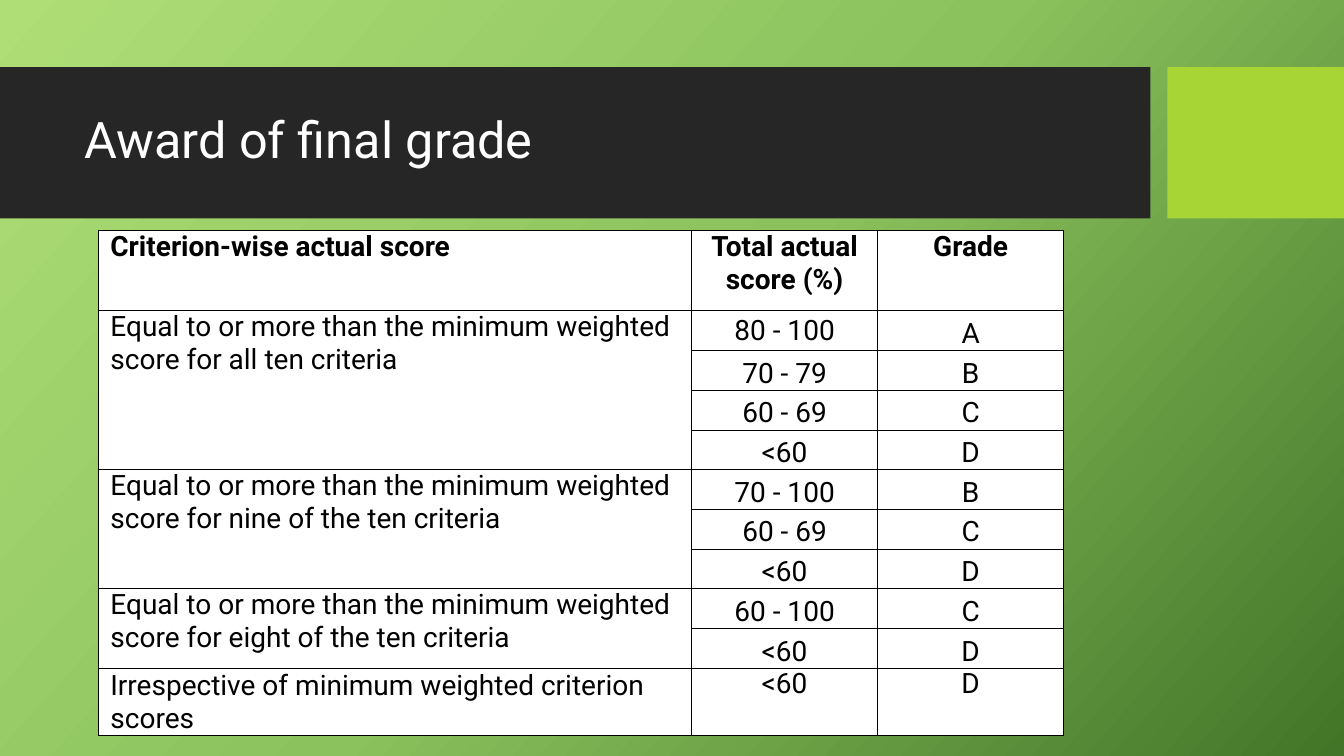
from copy import deepcopy

from lxml.etree import SubElement
from pptx import Presentation
from pptx.dml.color import RGBColor
from pptx.enum.shapes import MSO_SHAPE
from pptx.enum.text import MSO_ANCHOR, PP_ALIGN
from pptx.oxml.ns import qn
from pptx.util import Pt

FONT = "Roboto"
HEADINGS = ["Criterion-wise actual score", "Total actual score (%)", "Grade"]
CRITERIA = [
    ("Equal to or more than the minimum weighted score for all ten criteria",
     [("80 - 100", "A"), ("70 - 79", "B"), ("60 - 69", "C"), ("<60", "D")]),
    ("Equal to or more than the minimum weighted score for nine of the ten criteria",
     [("70 - 100", "B"), ("60 - 69", "C"), ("<60", "D")]),
    ("Equal to or more than the minimum weighted score for eight of the ten criteria",
     [("60 - 100", "C"), ("<60", "D")]),
    ("Irrespective of minimum weighted criterion scores", [("<60", "D")]),
]
COLUMN_WIDTHS = [423.8, 132.9, 132.9]
ROW_HEIGHTS = [57.5] + [28.35] * 9 + [47]


def color(value):
    return RGBColor.from_string(value)


def style(paragraph, size, text_color, bold=False):
    paragraph.font.name = FONT
    paragraph.font.size = Pt(size)
    paragraph.font.bold = bold
    paragraph.font.color.rgb = color(text_color)


def paint_background(slide, stops, angle):
    fill = slide.background.fill
    fill.gradient()
    stop_list = next(slide.element.iter(qn("a:gsLst")))
    stop_list.insert(1, deepcopy(stop_list[0]))
    for stop, (position, value) in zip(fill.gradient_stops, stops):
        stop.position = position
        stop.color.rgb = color(value)
    fill.gradient_angle = 360 - angle


def add_band(slide, left, width, value):
    band = slide.shapes.add_shape(MSO_SHAPE.RECTANGLE, Pt(left), Pt(48), Pt(width), Pt(108))
    band.shadow.inherit = False
    band.fill.solid()
    band.fill.fore_color.rgb = color(value)
    band.line.fill.background()


def add_title(slide, text):
    title = slide.shapes.add_textbox(Pt(53.3), Pt(59), Pt(756.7), Pt(85)).text_frame
    title.word_wrap = True
    title.vertical_anchor = MSO_ANCHOR.MIDDLE
    paragraph = title.paragraphs[0]
    paragraph.text = text
    paragraph.line_spacing = 0.9
    style(paragraph, 36, "FFFFFF")


def add_borders(cell):
    properties = cell._tc.get_or_add_tcPr()
    for index, side in enumerate(["a:lnL", "a:lnR", "a:lnT", "a:lnB"]):
        border = SubElement(properties, qn(side), w=str(Pt(0.5)))
        border_fill = SubElement(border, qn("a:solidFill"))
        SubElement(border_fill, qn("a:srgbClr"), val="000000")
        properties.insert(index, border)


def format_cell(cell):
    cell.margin_left = cell.margin_right = cell.margin_top = cell.margin_bottom = 0
    cell.fill.solid()
    cell.fill.fore_color.rgb = color("FFFFFF")
    add_borders(cell)


def write_cell(cell, text, centered=True, anchor=MSO_ANCHOR.TOP, bold=False):
    cell.vertical_anchor = anchor
    paragraph = cell.text_frame.paragraphs[0]
    paragraph.text = text
    if centered:
        paragraph.alignment = PP_ALIGN.CENTER
    else:
        paragraph._p.get_or_add_pPr().set("marL", str(Pt(8.64)))
    style(paragraph, 20, "000000", bold)


def add_grade_table(slide):
    grades = slide.shapes.add_table(
        len(ROW_HEIGHTS), len(COLUMN_WIDTHS), Pt(70.2), Pt(164.5),
        Pt(sum(COLUMN_WIDTHS)), Pt(sum(ROW_HEIGHTS))).table
    grades.first_row = grades.horz_banding = False
    for column, width in zip(grades.columns, COLUMN_WIDTHS):
        column.width = Pt(width)
    for row, height in zip(grades.rows, ROW_HEIGHTS):
        row.height = Pt(height)
    for cell in grades.iter_cells():
        format_cell(cell)
    for index, heading in enumerate(HEADINGS):
        write_cell(grades.cell(0, index), heading, centered=index > 0, bold=True)

    first = 1
    for criterion, bands in CRITERIA:
        single = len(bands) == 1
        criterion_cell = grades.cell(first, 0)
        if not single:
            criterion_cell.merge(grades.cell(first + len(bands) - 1, 0))
        write_cell(criterion_cell, criterion, centered=False,
                   anchor=MSO_ANCHOR.BOTTOM if single else MSO_ANCHOR.TOP)
        anchor = MSO_ANCHOR.TOP if single else MSO_ANCHOR.BOTTOM
        for row, (score, grade) in enumerate(bands, first):
            write_cell(grades.cell(row, 1), score,
                       anchor=MSO_ANCHOR.MIDDLE if row == 1 else anchor)
            write_cell(grades.cell(row, 2), grade, anchor=anchor)
        first += len(bands)


def main():
    presentation = Presentation()
    presentation.slide_width = Pt(960)
    presentation.slide_height = Pt(540)
    slide = presentation.slides.add_slide(presentation.slide_layouts[6])
    paint_background(slide, [(0, "AFDE77"), (0.5, "8BC25D"), (1, "437528")], 42)
    add_band(slide, 0, 821.8, "262626")
    add_band(slide, 833.8, 126.2, "A7D535")
    add_title(slide, "Award of final grade")
    add_grade_table(slide)
    presentation.save("out.pptx")


if __name__ == "__main__":
    main()
